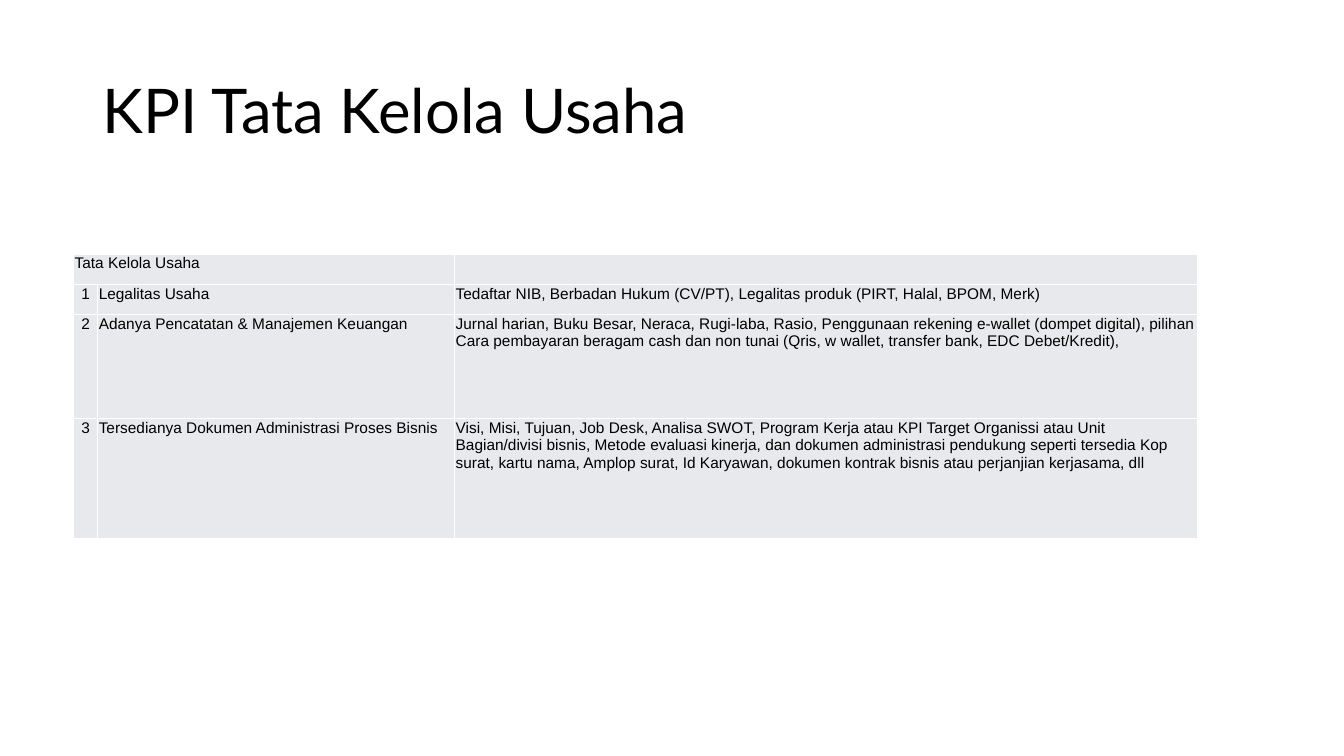
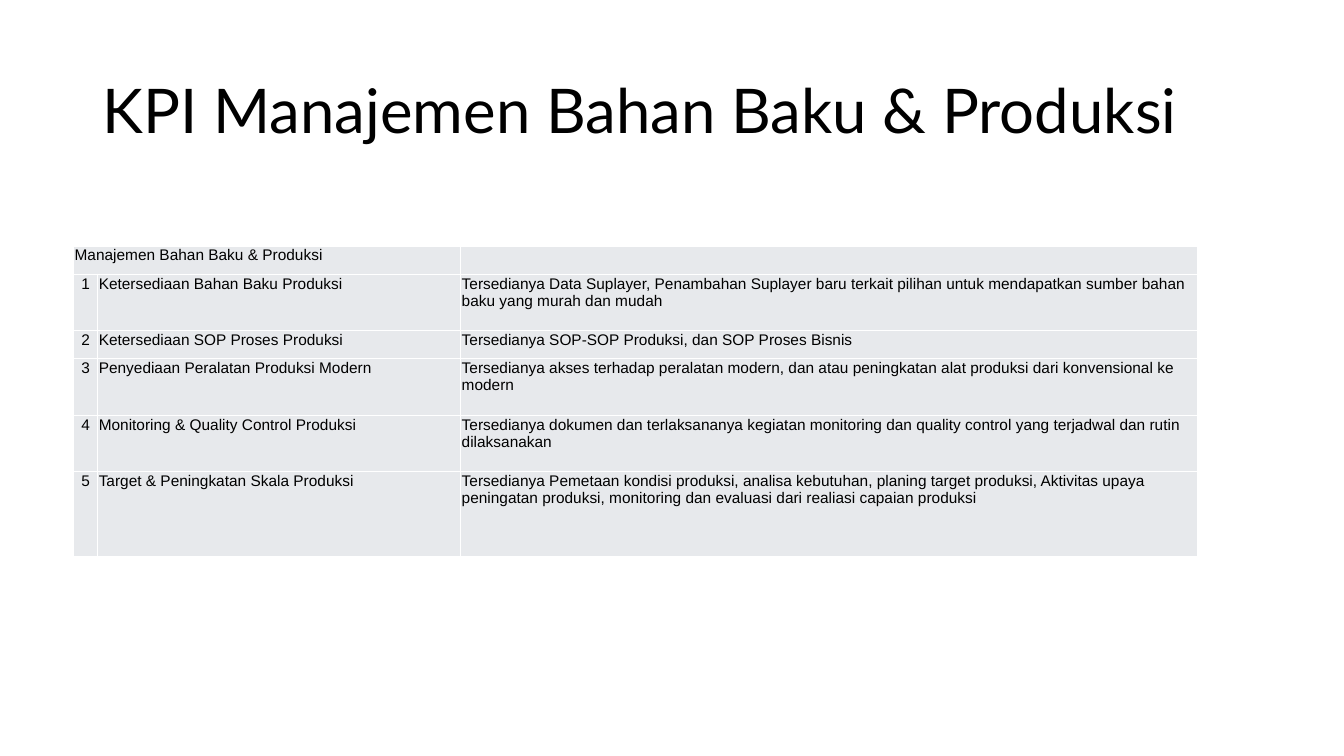
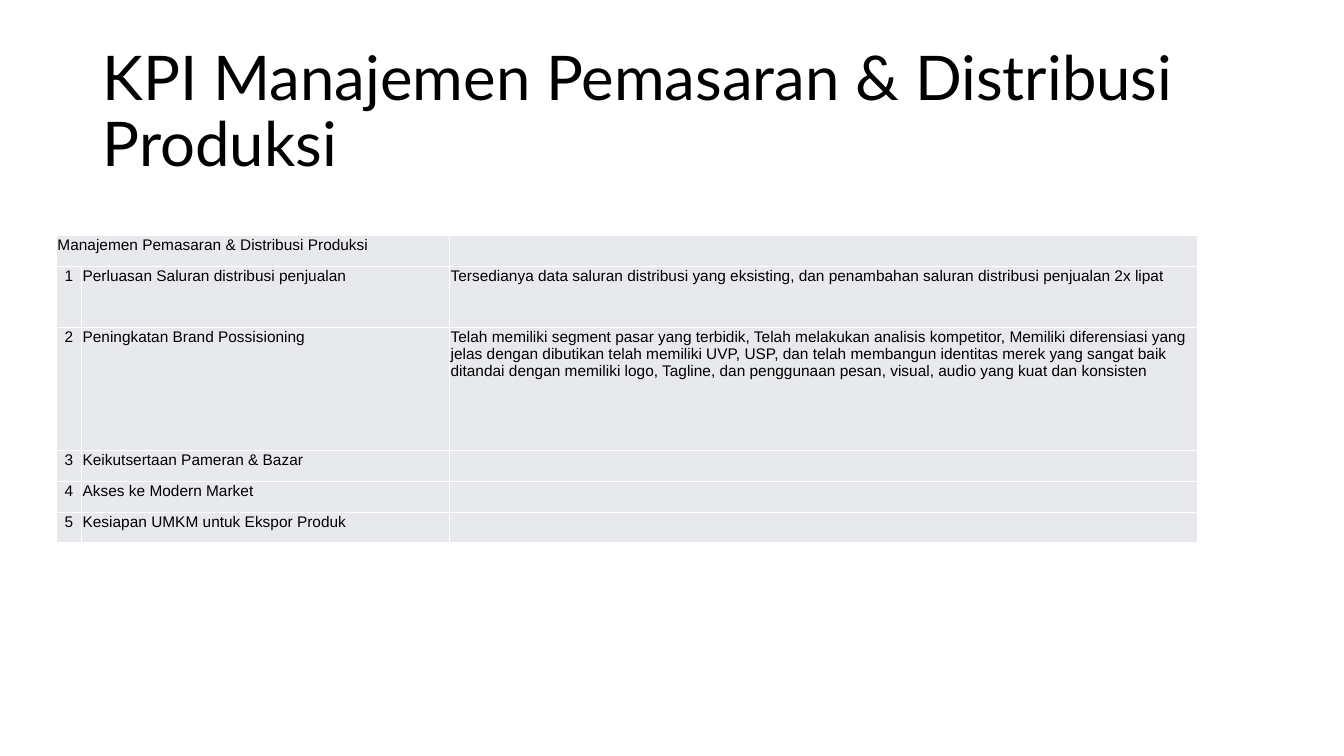
from dataclasses import dataclass

from lxml import etree
from pptx import Presentation
from pptx.dml.color import RGBColor
from pptx.enum.text import MSO_ANCHOR, MSO_AUTO_SIZE, PP_ALIGN
from pptx.oxml.ns import qn
from pptx.util import Emu, Inches, Pt

LEFT = PP_ALIGN.LEFT
CENTER = PP_ALIGN.CENTER
TOP = MSO_ANCHOR.TOP
MIDDLE = MSO_ANCHOR.MIDDLE
NO_AUTOFIT = MSO_AUTO_SIZE.NONE
TITLE_ONLY = 5


@dataclass(frozen=True)
class Theme:
    width: float = 13.33
    height: float = 7.5
    title_box: tuple = (0.92, 0.4, 11.5, 1.45)
    table_right: float = 11.88
    cell_margin: float = 0.01
    title_font: str = "Lato"
    title_size: int = 44
    table_font: str = "Arial"
    table_size: int = 11
    text: str = "000000"
    cell_fill: str = "E7E9EC"
    border: str = "FFFFFF"
    border_width: int = 1


@dataclass(frozen=True)
class Indicators:
    title: str
    heading: str
    left: float
    top: float
    number_width: float
    name_width: float
    row_unit: float
    row_units: tuple
    rows: tuple


THEME = Theme()

SLIDES = (
    Indicators(
        "KPI Tata Kelola Usaha", "Tata Kelola Usaha",
        0.73, 2.52, 0.24, 3.54, 0.3, (1, 1, 3.45, 3.95),
        (
            ("Legalitas Usaha",
             "Tedaftar NIB, Berbadan Hukum (CV/PT), Legalitas produk (PIRT, Halal, BPOM, Merk)"),
            ("Adanya Pencatatan & Manajemen Keuangan",
             "Jurnal harian, Buku Besar, Neraca, Rugi-laba, Rasio, Penggunaan rekening e-wallet "
             "(dompet digital), pilihan Cara pembayaran beragam cash dan non tunai (Qris, w wallet, "
             "transfer bank, EDC Debet/Kredit),"),
            ("Tersedianya Dokumen Administrasi Proses Bisnis",
             "Visi, Misi, Tujuan, Job Desk, Analisa SWOT, Program Kerja atau KPI Target Organissi "
             "atau Unit Bagian/divisi bisnis, Metode evaluasi kinerja, dan dokumen administrasi "
             "pendukung seperti tersedia Kop surat, kartu nama, Amplop surat, Id Karyawan, dokumen "
             "kontrak bisnis atau perjanjian kerjasama, dll"),
        ),
    ),
    Indicators(
        "KPI Manajemen Bahan Baku & Produksi", "Manajemen Bahan Baku & Produksi",
        0.73, 2.44, 0.24, 3.6, 0.28, (1, 2, 1, 2, 2, 3),
        (
            ("Ketersediaan Bahan Baku Produksi",
             "Tersedianya Data Suplayer, Penambahan Suplayer baru terkait pilihan untuk mendapatkan "
             "sumber bahan baku yang murah dan mudah"),
            ("Ketersediaan SOP Proses Produksi",
             "Tersedianya SOP-SOP Produksi, dan SOP Proses Bisnis"),
            ("Penyediaan Peralatan Produksi Modern",
             "Tersedianya akses terhadap peralatan modern, dan atau peningkatan alat produksi dari "
             "konvensional ke modern"),
            ("Monitoring & Quality Control Produksi",
             "Tersedianya dokumen dan terlaksananya kegiatan monitoring dan quality control yang "
             "terjadwal dan rutin dilaksanakan"),
            ("Target & Peningkatan Skala Produksi",
             "Tersedianya Pemetaan kondisi produksi, analisa kebutuhan, planing target produksi, "
             "Aktivitas upaya peningatan produksi, monitoring dan evaluasi dari realiasi capaian "
             "produksi"),
        ),
    ),
    Indicators(
        "KPI Manajemen Pemasaran & Distribusi Produksi",
        "Manajemen Pemasaran & Distribusi Produksi",
        0.56, 2.34, 0.25, 3.65, 0.3, (1, 2.03, 4.07, 1.02, 1.02, 1.02),
        (
            ("Perluasan Saluran distribusi penjualan",
             "Tersedianya data saluran distribusi yang eksisting, dan penambahan saluran distribusi "
             "penjualan 2x lipat"),
            ("Peningkatan Brand Possisioning",
             "Telah memiliki segment pasar yang terbidik, Telah melakukan analisis kompetitor, "
             "Memiliki diferensiasi yang jelas dengan dibutikan telah memiliki UVP, USP, dan telah "
             "membangun identitas merek yang sangat baik ditandai dengan memiliki logo, Tagline, dan "
             "penggunaan pesan, visual, audio yang kuat dan konsisten"),
            ("Keikutsertaan Pameran & Bazar", ""),
            ("Akses ke Modern Market", ""),
            ("Kesiapan UMKM untuk Ekspor Produk", ""),
        ),
    ),
)


def format_runs(paragraph, font_name, size):
    for run in paragraph.runs:
        run.font.name = font_name
        run.font.size = Pt(size)
        run.font.color.rgb = RGBColor.from_string(THEME.text)


def add_title(slide, text):
    title = slide.shapes.title
    title.left, title.top, title.width, title.height = map(Inches, THEME.title_box)
    frame = title.text_frame
    frame.text = text
    frame.word_wrap = True
    frame.auto_size = NO_AUTOFIT
    frame.vertical_anchor = MIDDLE
    paragraph = frame.paragraphs[0]
    paragraph.alignment = LEFT
    paragraph.line_spacing = 0.9
    format_runs(paragraph, THEME.title_font, THEME.title_size)


def add_borders(cell):
    properties = cell._tc.get_or_add_tcPr()
    for side in ("a:lnL", "a:lnR", "a:lnT", "a:lnB"):
        line = etree.SubElement(properties, qn(side), w=str(Pt(THEME.border_width)))
        fill = etree.SubElement(line, qn("a:solidFill"))
        etree.SubElement(fill, qn("a:srgbClr"), val=THEME.border)


def style_cell(cell):
    cell.margin_left = cell.margin_right = cell.margin_top = Inches(THEME.cell_margin)
    cell.margin_bottom = Emu(0)
    cell.vertical_anchor = TOP
    add_borders(cell)
    cell.fill.solid()
    cell.fill.fore_color.rgb = RGBColor.from_string(THEME.cell_fill)


def write_cell(cell, text, alignment):
    cell.text_frame.text = text
    paragraph = cell.text_frame.paragraphs[0]
    paragraph.alignment = alignment
    format_runs(paragraph, THEME.table_font, THEME.table_size)
    if not text:
        etree.SubElement(paragraph._p, qn("a:endParaRPr"), sz=str(THEME.table_size * 100))


def add_indicator_table(slide, indicators):
    total_width = THEME.table_right - indicators.left
    detail_width = total_width - indicators.number_width - indicators.name_width
    widths = (indicators.number_width, indicators.name_width, detail_width)
    heights = [units * indicators.row_unit for units in indicators.row_units]
    table = slide.shapes.add_table(
        len(heights), len(widths), Inches(indicators.left), Inches(indicators.top),
        Inches(total_width), Inches(sum(heights))).table
    table.first_row = table.horz_banding = False
    for column, width in zip(table.columns, widths):
        column.width = Inches(width)
    for row, height in zip(table.rows, heights):
        row.height = Inches(height)

    numbered = [(str(number), *row) for number, row in enumerate(indicators.rows, 1)]
    contents = [(indicators.heading, "", ""), *numbered]
    for row_index, values in enumerate(contents):
        for column_index, value in enumerate(values):
            cell = table.cell(row_index, column_index)
            style_cell(cell)
            is_number = row_index > 0 and column_index == 0
            write_cell(cell, value, CENTER if is_number else LEFT)
    table.cell(0, 0).merge(table.cell(0, 1))


def main():
    presentation = Presentation()
    presentation.slide_width = Inches(THEME.width)
    presentation.slide_height = Inches(THEME.height)
    for indicators in SLIDES:
        slide = presentation.slides.add_slide(presentation.slide_layouts[TITLE_ONLY])
        add_title(slide, indicators.title)
        add_indicator_table(slide, indicators)
    presentation.save("out.pptx")


if __name__ == "__main__":
    main()
